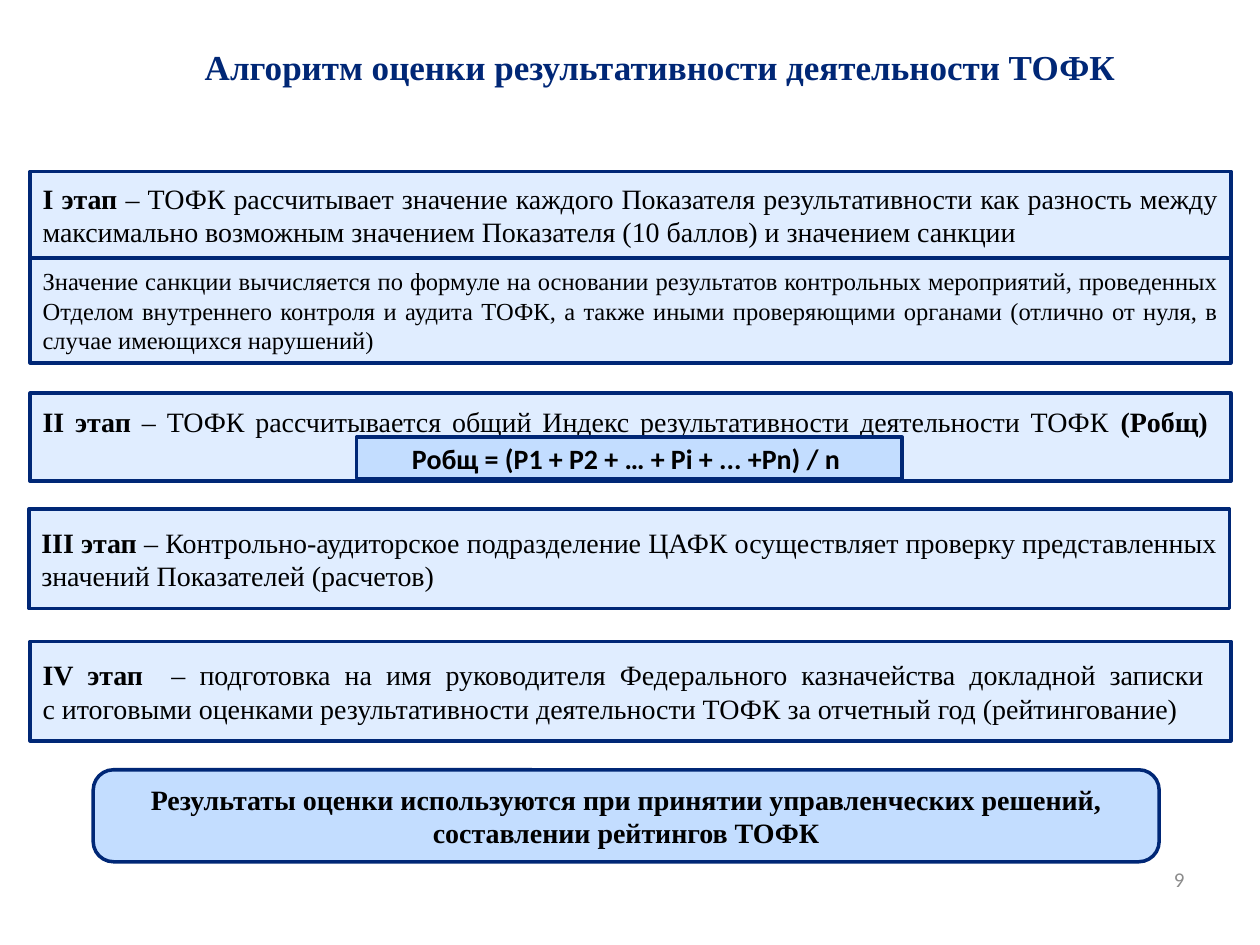
"""Build the slide on the stages of scoring the work of treasury bodies."""
from dataclasses import dataclass

from lxml.etree import SubElement
from pptx import Presentation
from pptx.dml.color import RGBColor
from pptx.enum.shapes import MSO_SHAPE as Kind
from pptx.enum.text import MSO_ANCHOR as Anchor, MSO_AUTO_SIZE as Fit, PP_ALIGN as Align
from pptx.oxml.ns import qn
from pptx.util import Inches, Pt

WIDE, HIGH = Inches(10), Inches(7.5)
COLS, ROWS = 100, 75
NAVY, PALE, BLACK, GREY = "002776", "C3DDFF", "000000", "8C8C8C"
SERIF, SANS = "Times New Roman", "Calibri"
LEFT, SPAN = 2.4, 95.3


@dataclass
class Box:
    top: float
    tall: float
    words: tuple[tuple[str, bool], ...]
    left: float = LEFT
    span: float = SPAN
    size: int = 16
    face: str = SERIF
    align: Align = Align.JUSTIFY
    anchor: Anchor = Anchor.MIDDLE
    clear: bool = True
    kind: Kind = Kind.RECTANGLE


BOXES = (
    Box(13.6, 6.9, (
        ("I этап ", True),
        ("– ТОФК рассчитывает значение каждого Показателя результативности как разность "
         "между максимально возможным значением Показателя (10 баллов) и значением санкции", False))),
    Box(20.5, 8.3, (
        ("Значение санкции вычисляется по формуле на основании результатов контрольных "
         "мероприятий, проведенных Отделом внутреннего контроля и аудита ТОФК, а также иными "
         "проверяющими органами (отлично от нуля, в случае имеющихся нарушений)", False),), size=14),
    Box(31.2, 7, (
        ("II этап ", True),
        ("– ТОФК рассчитывается общий Индекс результативности деятельности ТОФК ", False),
        ("(Pобщ) \n", True)), anchor=Anchor.TOP),
    Box(40.4, 7.9, (
        ("III этап ", True),
        ("– Контрольно-аудиторское подразделение ЦАФК осуществляет проверку "
         "представленных значений Показателей (расчетов)", False)), left=2.3),
    Box(50.9, 7.9, (
        ("IV этап  ", True),
        ("– подготовка на имя руководителя Федерального казначейства докладной записки \n"
         "с итоговыми оценками результативности деятельности ТОФК за отчетный год "
         "(рейтингование)", False))),
    Box(34.7, 3.3, (("Робщ = (Р1 + Р2 + … + Рi + ... +Рn) / n ", True),),
        left=28.3, span=43.3, face=SANS, align=Align.CENTER, clear=False),
    Box(61.1, 7.3, (
        ("Результаты оценки используются при принятии управленческих решений,\n"
         "составлении рейтингов ТОФК", True),),
        left=7.4, span=84.6, align=Align.CENTER, clear=False, kind=Kind.ROUNDED_RECTANGLE),
)


def tint(code: str) -> RGBColor:
    return RGBColor.from_string(code)


def area(left: float, top: float, span: float, tall: float) -> tuple[int, ...]:
    return (int(WIDE * left / COLS), int(HIGH * top / ROWS),
            int(WIDE * span / COLS), int(HIGH * tall / ROWS))


def style(run, size: int, face: str, code: str, bold: bool) -> None:
    font = run.font
    font.size, font.name, font.bold = Pt(size), face, bold
    font.color.rgb = tint(code)


def write(frame, text: str, size: int, face: str, code: str, bold: bool,
          align: Align, anchor: Anchor) -> None:
    frame.text = text
    frame.word_wrap = True
    frame.auto_size = Fit.NONE
    frame.vertical_anchor = anchor
    para = frame.paragraphs[0]
    para.alignment = align
    for run in para.runs:
        style(run, size, face, code, bold)


def draw(slide, box: Box) -> None:
    shape = slide.shapes.add_shape(box.kind, *area(box.left, box.top, box.span, box.tall))
    shape.shadow.inherit = False
    shape.fill.solid()
    shape.fill.fore_color.rgb = tint(PALE)
    shape.line.color.rgb = tint(NAVY)
    shape.line.width = Pt(2)
    if box.clear:
        hue = shape._element.spPr.find(qn("a:solidFill")).find(qn("a:srgbClr"))
        SubElement(hue, qn("a:alpha")).set("val", "50000")
    if box.kind == Kind.ROUNDED_RECTANGLE:
        shape.adjustments[0] = 0.22
    frame = shape.text_frame
    frame.word_wrap = True
    frame.vertical_anchor = box.anchor
    if box.anchor == Anchor.TOP:
        frame.margin_top = Inches(0.09)
    para = frame.paragraphs[0]
    para.alignment = box.align
    for text, bold in box.words:
        for row, line in enumerate(text.split("\n")):
            if row:
                para.add_line_break()
            if line:
                run = para.add_run()
                run.text = line
                style(run, box.size, box.face, BLACK, bold)


def main() -> None:
    deck = Presentation()
    deck.slide_width, deck.slide_height = WIDE, HIGH
    slide = deck.slides.add_slide(deck.slide_layouts[5])
    title = slide.shapes.title
    title.left, title.top, title.width, title.height = area(LEFT, 3.1, 100, 4.4)
    write(title.text_frame, "Алгоритм оценки результативности деятельности ТОФК",
          20, SERIF, NAVY, True, Align.CENTER, Anchor.MIDDLE)
    for box in BOXES:
        draw(slide, box)
    page = slide.shapes.add_textbox(*area(71.7, 67.8, 23.3, 4))
    write(page.text_frame, "9", 12, SANS, GREY, False, Align.RIGHT, Anchor.MIDDLE)
    deck.save("out.pptx")


if __name__ == "__main__":
    main()
